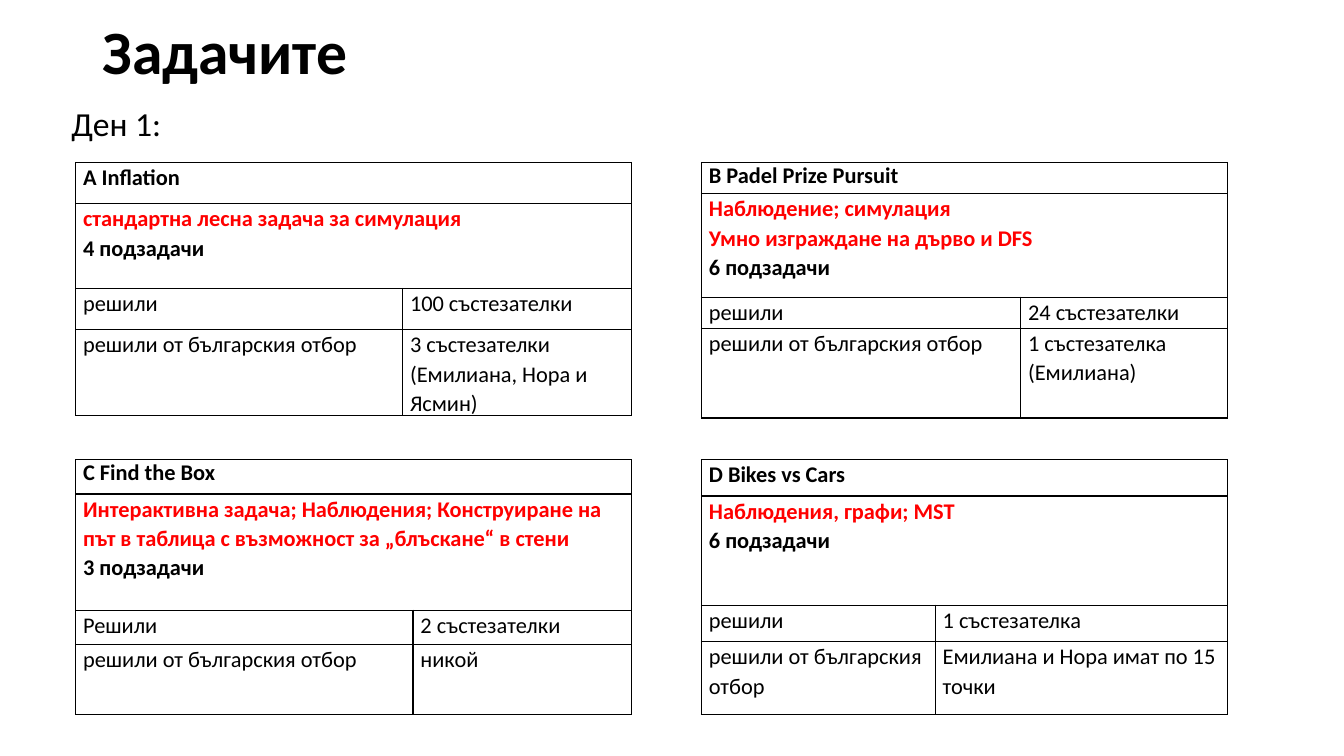
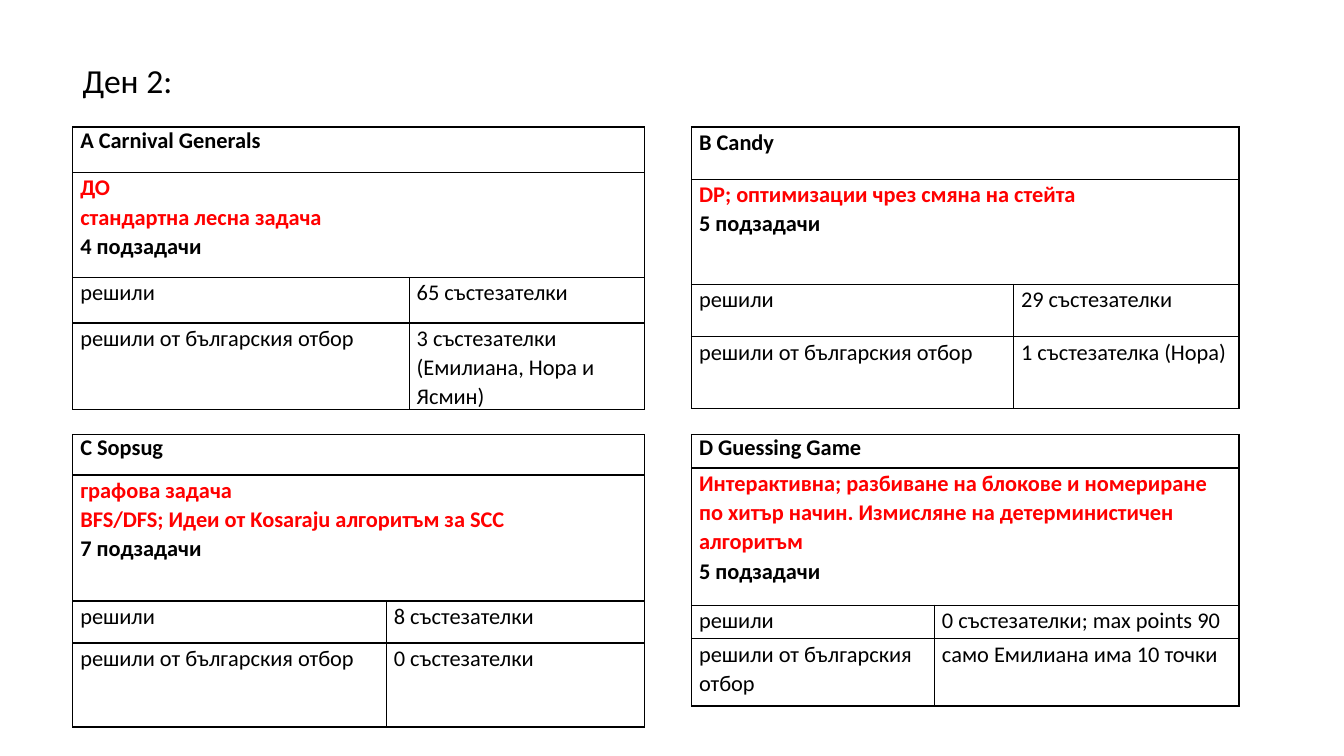
from collections import namedtuple
from itertools import product

from lxml.etree import SubElement
from pptx import Presentation
from pptx.dml.color import RGBColor
from pptx.enum.text import MSO_ANCHOR, MSO_AUTO_SIZE, PP_ALIGN
from pptx.oxml.ns import qn
from pptx.util import Pt

FONT = "Calibri"
HUES = {"ink": "000000", "red": "FF0000"}
TEAM = "решили от българския отбор"

Grid = namedtuple("Grid", "lefts tops widths")
Task = namedtuple("Task", "name topics count solved team split rows lead label",
                  defaults=(1.07, "решили"))

GRID1 = Grid((54, 501), (116, 328.3), (397, 376))
GRID2 = Grid((52, 494), (90.7, 310.3), (408.5, 391))

DAY1 = [
    Task("А Inflation", ["стандартна лесна задача за симулация"], "4 подзадачи",
         "100 състезателки", "3 състезателки (Емилиана, Нора и Ясмин)",
         233.5, (29.5, 60.5, 29.5, 61)),
    Task("B Padel Prize Pursuit",
         ["Наблюдение; симулация", "Умно изграждане на дърво и DFS"], "6 подзадачи",
         "24 състезателки", "1 състезателка (Емилиана)",
         228, (22.3, 74, 22.3, 64), 1),
    Task("C Find the Box",
         ["Интерактивна задача; Наблюдения; Конструиране на път в таблица "
          "с възможност за „блъскане“ в стени"], "3 подзадачи",
         "2 състезателки", "никой",
         241, (24.5, 83, 24.5, 50), 1, "Решили"),
    Task("D Bikes vs Cars", ["Наблюдения, графи; MST"], "6 подзадачи",
         "1 състезателкa", "Емилиана и Нора имат по 15 точки",
         167, (26, 78, 26, 52)),
]
DAY2 = [
    Task("А Carnival Generals", ["ДО", "стандартна лесна задача"], "4 подзадачи",
         "65 състезателки", "3 състезателки (Емилиана, Нора и Ясмин)",
         240.3, (32.5, 75, 32.5, 61), 1),
    Task("B Candy", ["DP; оптимизации чрез смяна на стейта"], "5 подзадачи",
         "29 състезателки", "1 състезателка (Нора)",
         230, (37.5, 75, 37.5, 51)),
    Task("C Sopsug", ["графова задача", "BFS/DFS; Идеи от Kosaraju алгоритъм за SCC"],
         "7 подзадачи", "8 състезателки", "0 състезателки",
         224, (29, 90, 30, 60), 1),
    Task("D Guessing Game",
         ["Интерактивна; разбиване на блокове и номериране по хитър начин. "
          "Измисляне на детерминистичен алгоритъм"], "5 подзадачи",
         "0 състезателки; max points 90", "само Емилиана има 10 точки",
         173.5, (24, 98, 24, 48), 1),
]


def style(para, size, hue="ink", bold=False, lead=1):
    """Set the font and line spacing of a paragraph."""
    font = para.font
    font.name, font.size, font.bold = FONT, Pt(size), bold
    font.color.rgb = RGBColor.from_string(HUES[hue])
    para.line_spacing = lead


def write(cell, lines, bold=False, lead=1.07):
    """Write (text, hue) lines into a cell."""
    cell.text = "\n".join(text for text, _ in lines)
    for para, (_, hue) in zip(cell.text_frame.paragraphs, lines):
        style(para, 16, hue, bold, lead)


def frame(cell):
    """Give a cell thin black borders, tight margins and no fill."""
    cell.margin_left = cell.margin_right = Pt(5.4)
    cell.margin_top = cell.margin_bottom = 0
    props = cell._tc.get_or_add_tcPr()
    for side in ("a:lnL", "a:lnR", "a:lnT", "a:lnB"):
        line = SubElement(props, qn(side), w=str(Pt(1)))
        fill = SubElement(line, qn("a:solidFill"))
        SubElement(fill, qn("a:srgbClr"), val=HUES["ink"])
    cell.fill.background()


def add_task(slide, task, left, top, width):
    """Add the table of one task."""
    table = slide.shapes.add_table(4, 2, Pt(left), Pt(top), Pt(width),
                                   Pt(sum(task.rows))).table
    table.first_row = table.horz_banding = False
    for col, size in zip(table.columns, (task.split, width - task.split)):
        col.width = Pt(size)
    for row, size in zip(table.rows, task.rows):
        row.height = Pt(size)
    for cell in table.iter_cells():
        frame(cell)
    for row in (0, 1):
        table.cell(row, 0).merge(table.cell(row, 1))
    write(table.cell(0, 0), [(task.name, "ink")], True, task.lead)
    topics = [(text, "red") for text in task.topics]
    write(table.cell(1, 0), topics + [(task.count, "ink")], True)
    facts = ((task.label, task.solved), (TEAM, task.team))
    for row, col in product((0, 1), repeat=2):
        write(table.cell(row + 2, col), [(facts[row][col], "ink")])


def add_title(slide, text):
    """Place and format the slide title."""
    title = slide.shapes.title
    title.left, title.top, title.width, title.height = map(Pt, (66, 8.5, 828, 61))
    body = title.text_frame
    body.text = text
    body.auto_size = MSO_AUTO_SIZE.NONE
    body.vertical_anchor = MSO_ANCHOR.MIDDLE
    para = body.paragraphs[0]
    para.alignment = PP_ALIGN.LEFT
    style(para, 44, bold=True, lead=0.9)


def add_day(slide, text, left, top, grid, tasks):
    """Add a day label and its grid of tasks."""
    body = slide.shapes.add_textbox(Pt(left), Pt(top), Pt(750), Pt(36)).text_frame
    body.word_wrap = True
    body.text = text
    style(body.paragraphs[0], 24)
    spots = product(grid.tops, zip(grid.lefts, grid.widths))
    for task, (y, (x, width)) in zip(tasks, spots):
        add_task(slide, task, x, y, width)


def main():
    """Build and save the deck."""
    deck = Presentation()
    deck.slide_width, deck.slide_height = Pt(960), Pt(540)
    first = deck.slides.add_slide(deck.slide_layouts[5])
    add_title(first, "Задачите")
    add_day(first, "Ден 1:", 44, 70, GRID1, DAY1)
    second = deck.slides.add_slide(deck.slide_layouts[6])
    add_day(second, "Ден 2:", 52, 39.5, GRID2, DAY2)
    deck.save("out.pptx")


if __name__ == "__main__":
    main()
